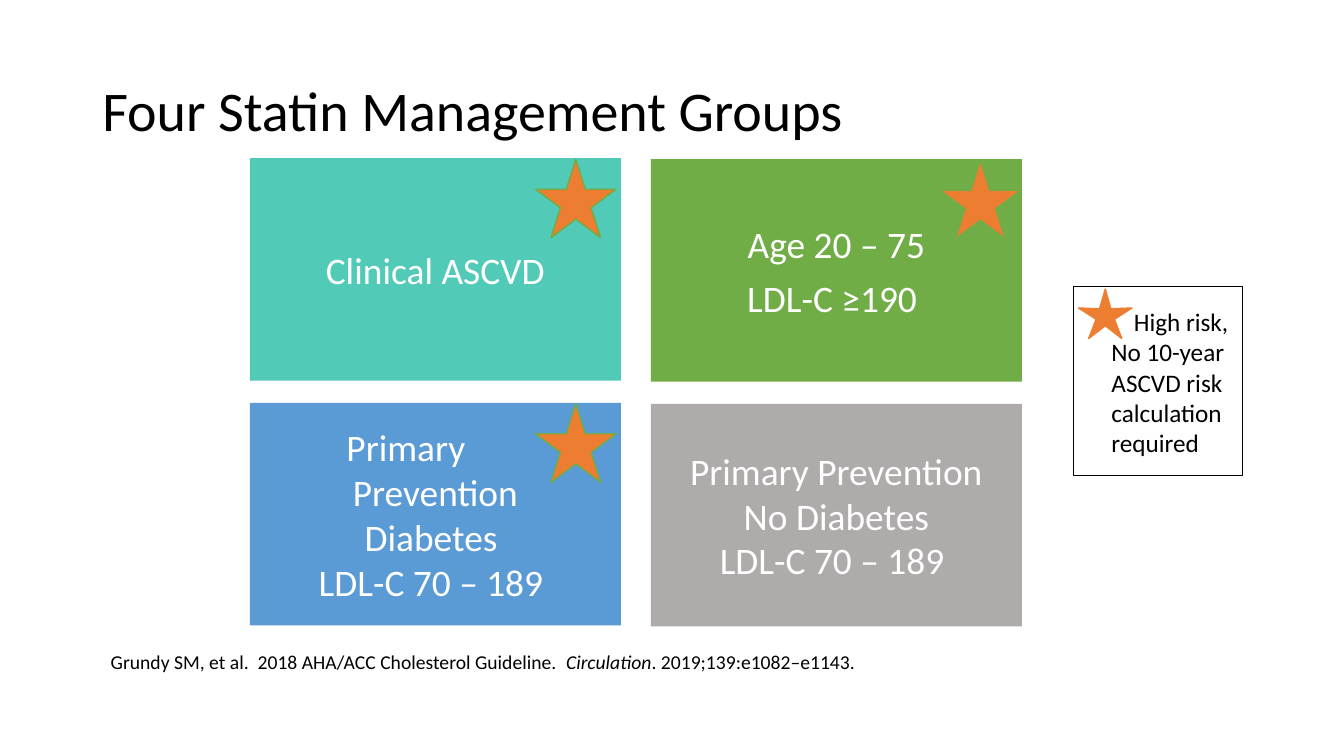
from pptx import Presentation
from pptx import util as u
from pptx.dml.color import RGBColor
from pptx.enum import shapes, text

COLORS = {
    "teal": "52CAB8", "green": "70AD47", "blue": "5B9BD5", "gray": "AFABAB",
    "orange": "ED7D31", "white": "FFFFFF", "black": "000000",
}
TILE_W, TILE_H = 265, 159
PITCH_X, PITCH_Y = 286.5, 174.7
RIGHT_DROP = 0.7


def rgb(name):
    """Return the named colour."""
    return RGBColor.from_string(COLORS[name])


def set_frame(s, insets, anchor):
    """Set wrapping, insets and anchor, and return the text frame."""
    tf = s.text_frame
    tf.word_wrap = True
    tf.vertical_anchor = anchor
    tf.margin_left, tf.margin_top, tf.margin_right, tf.margin_bottom = map(u.Pt, insets)
    return tf


def add_run(p, words, size, color, italic=False):
    """Append one formatted run to a paragraph."""
    r = p.add_run()
    r.text = words
    r.font.name = "Calibri"
    r.font.size = u.Pt(size)
    r.font.italic = italic
    r.font.color.rgb = rgb(color)


def add_paragraph(tf, index, align):
    """Return the paragraph at an index, adding it after the first."""
    p = tf.add_paragraph() if index else tf.paragraphs[0]
    p.alignment = align
    return p


def indent(p, left, first=0):
    """Indent a paragraph and, further, its first line."""
    pPr = p._p.get_or_add_pPr()
    pPr.set("marL", str(u.Pt(left)))
    pPr.set("indent", str(u.Pt(first)))


def add_shape(slide, kind, box, fill=None, line=None, width=1):
    """Add a flat preset shape in a box."""
    s = slide.shapes.add_shape(kind, *map(u.Pt, box))
    s.shadow.inherit = False
    if fill:
        s.fill.solid()
        s.fill.fore_color.rgb = rgb(fill)
    else:
        s.fill.background()
    if line:
        s.line.color.rgb = rgb(line)
        s.line.width = u.Pt(width)
    else:
        s.line.fill.background()
    return s


def add_star(slide, box, line):
    """Add an orange star in a box."""
    return add_shape(slide, shapes.MSO_SHAPE.STAR_5_POINT, box, "orange", line)


def add_text_line(slide, box, runs, size, anchor, spacing=1):
    """Add a one-paragraph text box from (words, italic) runs."""
    s = slide.shapes.add_textbox(*map(u.Pt, box))
    p = set_frame(s, (7.2, 3.6, 7.2, 3.6), anchor).paragraphs[0]
    p.line_spacing = spacing
    for words, italic in runs:
        add_run(p, words, size, "black", italic)


def add_tile(slide, box, fill, lines, gap=0, first_indent=None):
    """Add one group tile with centred lines."""
    s = add_shape(slide, shapes.MSO_SHAPE.RECTANGLE, box, fill)
    tf = set_frame(s, (10, 10, 10, 10), text.MSO_ANCHOR.MIDDLE)
    for i, words in enumerate(lines):
        p = add_paragraph(tf, i, text.PP_ALIGN.CENTER)
        if i:
            p.space_before = u.Pt(gap)
        elif first_indent:
            p.alignment = text.PP_ALIGN.LEFT
            indent(p, first_indent)
        add_run(p, words, 26.7, "white")


def add_groups(slide, left, top):
    """Add the two-by-two grid of groups with their high-risk stars."""
    groups = [
        (0, 0, "teal", ["Clinical ASCVD"], 0, None, 204),
        (1, 1, "gray", ["Primary Prevention", "No Diabetes", "LDL-C 70 – 189 "], 0, None, None),
        (1, 0, "green", ["Age 20 – 75", "LDL-C ≥190 "], 6.4, None, 206.5),
        (0, 1, "blue", ["Primary", "Prevention", "Diabetes ", "LDL-C 70 – 189 "], 0, 59, 204),
    ]
    stars = []
    for col, row, fill, lines, gap, first_indent, star_x in groups:
        x = left + col * PITCH_X
        y = top + row * PITCH_Y + col * RIGHT_DROP
        add_tile(slide, (x, y, TILE_W, TILE_H), fill, lines, gap, first_indent)
        if star_x:
            stars.append((x + star_x, y + 0.7, 57.6, 56.2))
    for box in stars:
        add_star(slide, box, "green")


def add_legend(slide, left, top, width, height):
    """Add the bordered key that explains the star."""
    s = add_shape(slide, shapes.MSO_SHAPE.RECTANGLE, (left, top, width, height),
                  line="black", width=0.75)
    tf = set_frame(s, (7.2, 14.4, 3, 3.6), text.MSO_ANCHOR.TOP)
    lines = ["High risk,", "No 10-year", "ASCVD risk", "calculation", "required"]
    for i, words in enumerate(lines):
        p = add_paragraph(tf, i, text.PP_ALIGN.LEFT)
        indent(p, 20, 0 if i else 16)
        add_run(p, words, 18, "black")
    star = add_star(slide, (left + 3.6, top + 2, 38.2, 35.3), "orange")
    star.adjustments[0] = 0.171


def main():
    """Build and save the slide."""
    prs = Presentation()
    prs.slide_width, prs.slide_height = u.Pt(960), u.Pt(540)
    slide = prs.slides.add_slide(prs.slide_layouts[6])
    add_text_line(slide, (66, 28.8, 828, 104.4), [("Four Statin Management Groups", False)],
                  40, text.MSO_ANCHOR.MIDDLE, 0.9)
    add_groups(slide, 178.5, 113)
    citation = [("Grundy SM, et al.  2018 AHA/ACC Cholesterol Guideline.  ", False),
                ("Circulation", True), (". 2019;139:e1082–e1143.", False)]
    add_text_line(slide, (72, 461, 780.5, 24.5), citation, 14, text.MSO_ANCHOR.TOP)
    add_legend(slide, 766.8, 204.5, 121, 135.4)
    prs.save("out.pptx")


if __name__ == "__main__":
    main()
